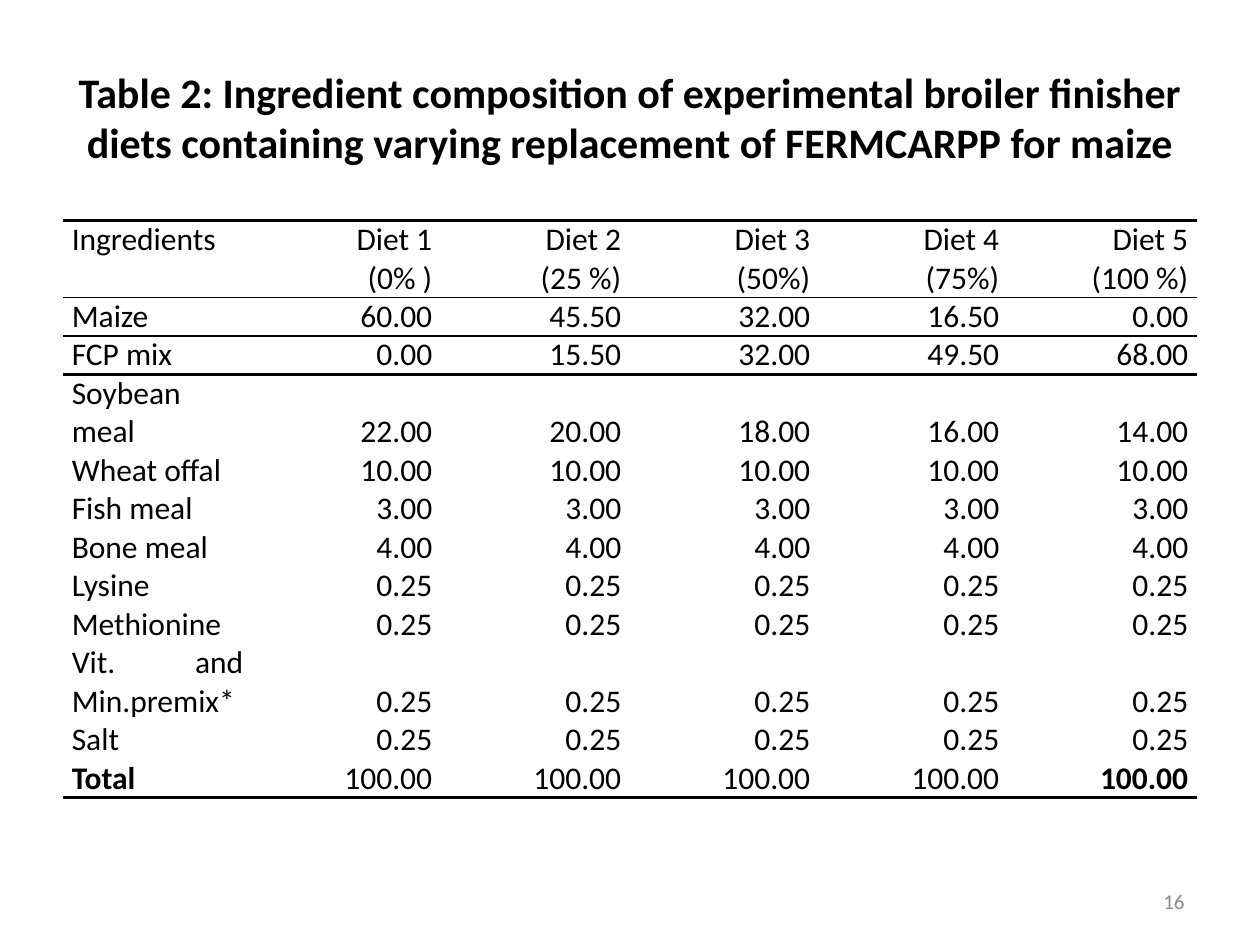
import pptx
import pptx.dml.color
import pptx.enum.text
import pptx.oxml
import pptx.oxml.ns
import pptx.util
from pptx.util import Inches

ALIGN = pptx.enum.text.PP_ALIGN
ANCHOR = pptx.enum.text.MSO_ANCHOR

THEME = {
    "font": "Calibri",
    "ink": "000000",
    "paper": "FFFFFF",
    "muted": "898989",
    "title_size": 24,
    "table_size": 18,
    "number_size": 12,
    "thick_rule": 2,
    "medium_rule": 1.5,
    "thin_rule": 1,
}

TITLE = ("Table 2: Ingredient composition of experimental broiler finisher "
         "diets containing varying replacement of FERMCARPP for maize")
PAGE_NUMBER = "16"
COMPOSITION = [
    ("Ingredients", "Diet 1\n(0% )", "Diet 2\n(25 %)", "Diet 3\n(50%)",
     "Diet 4\n(75%)", "Diet 5\n(100 %)"),
    ("Maize", "60.00", "45.50", "32.00", "16.50", "0.00"),
    ("FCP mix", "0.00", "15.50", "32.00", "49.50", "68.00"),
    ("Soybean meal", "22.00", "20.00", "18.00", "16.00", "14.00"),
    ("Wheat offal",) + ("10.00",) * 5,
    ("Fish meal",) + ("3.00",) * 5,
    ("Bone meal",) + ("4.00",) * 5,
    ("Lysine",) + ("0.25",) * 5,
    ("Methionine",) + ("0.25",) * 5,
    ("Vit. and Min.premix*",) + ("0.25",) * 5,
    ("Salt",) + ("0.25",) * 5,
    ("Total",) + ("100.00",) * 5,
]
LAST_ROW = len(COMPOSITION) - 1
LAST_COLUMN = len(COMPOSITION[0]) - 1
BOLD_CELLS = {(LAST_ROW, 0), (LAST_ROW, LAST_COLUMN)}
RULES = {
    0: {"lnT": THEME["thick_rule"], "lnB": THEME["thin_rule"]},
    1: {"lnT": THEME["thin_rule"], "lnB": THEME["medium_rule"]},
    2: {"lnT": THEME["medium_rule"]},
    LAST_ROW: {"lnB": THEME["thick_rule"]},
}
PLAIN_TABLE_STYLE = "{2D5ABB26-0587-4C30-8999-92F81FD0307C}"


def write(frame, text, size, align, color=THEME["ink"], bold=False):
    frame.text = text
    frame.word_wrap = True
    for paragraph in frame.paragraphs:
        paragraph.alignment = align
        for run in paragraph.runs:
            run.font.name = THEME["font"]
            run.font.size = pptx.util.Pt(size)
            run.font.bold = bold
            run.font.color.rgb = pptx.dml.color.RGBColor.from_string(color)


def rule_cell(cell, rules):
    properties = cell._tc.get_or_add_tcPr()
    for side, width in rules.items():
        properties.append(pptx.oxml.parse_xml(
            f'<a:{side} {pptx.oxml.ns.nsdecls("a")} w="{pptx.util.Pt(width)}">'
            f'<a:solidFill><a:srgbClr val="{THEME["ink"]}"/></a:solidFill>'
            f'<a:prstDash val="solid"/></a:{side}>'))


def add_composition(slide):
    holder = slide.shapes.add_table(
        len(COMPOSITION), len(COMPOSITION[0]),
        Inches(0.5), Inches(1.75), Inches(9), Inches(4.5))
    table = holder.table
    table.first_row = False
    table.horz_banding = False
    style = table._tbl.tblPr.find(pptx.oxml.ns.qn("a:tableStyleId"))
    style.text = PLAIN_TABLE_STYLE
    for r, ingredient in enumerate(COMPOSITION):
        table.rows[r].height = Inches(0.28)
        for c, entry in enumerate(ingredient):
            cell = table.cell(r, c)
            cell.margin_left = cell.margin_right = Inches(0.07)
            cell.margin_top = cell.margin_bottom = 0
            cell.vertical_anchor = ANCHOR.BOTTOM if c else ANCHOR.TOP
            write(cell.text_frame, entry, THEME["table_size"],
                  ALIGN.RIGHT if c else ALIGN.JUSTIFY,
                  bold=(r, c) in BOLD_CELLS)
            rule_cell(cell, RULES.get(r, {}))
            cell.fill.solid()
            cell.fill.fore_color.rgb = pptx.dml.color.RGBColor.from_string(
                THEME["paper"])
    holder.height = Inches(4.5)


def main():
    deck = pptx.Presentation()
    deck.slide_width, deck.slide_height = Inches(10), Inches(7.5)
    slide = deck.slides.add_slide(deck.slide_layouts[5])

    title = slide.shapes.title
    title.left, title.top = Inches(0.5), Inches(0.3)
    title.width, title.height = Inches(9), Inches(1.25)
    title.text_frame.vertical_anchor = ANCHOR.MIDDLE
    write(title.text_frame, TITLE, THEME["title_size"], ALIGN.CENTER, bold=True)

    add_composition(slide)

    page_number = slide.shapes.add_textbox(
        Inches(7.17), Inches(6.95), Inches(2.33), Inches(0.4))
    page_number.text_frame.vertical_anchor = ANCHOR.MIDDLE
    write(page_number.text_frame, PAGE_NUMBER, THEME["number_size"],
          ALIGN.RIGHT, color=THEME["muted"])

    deck.save("out.pptx")


if __name__ == "__main__":
    main()
